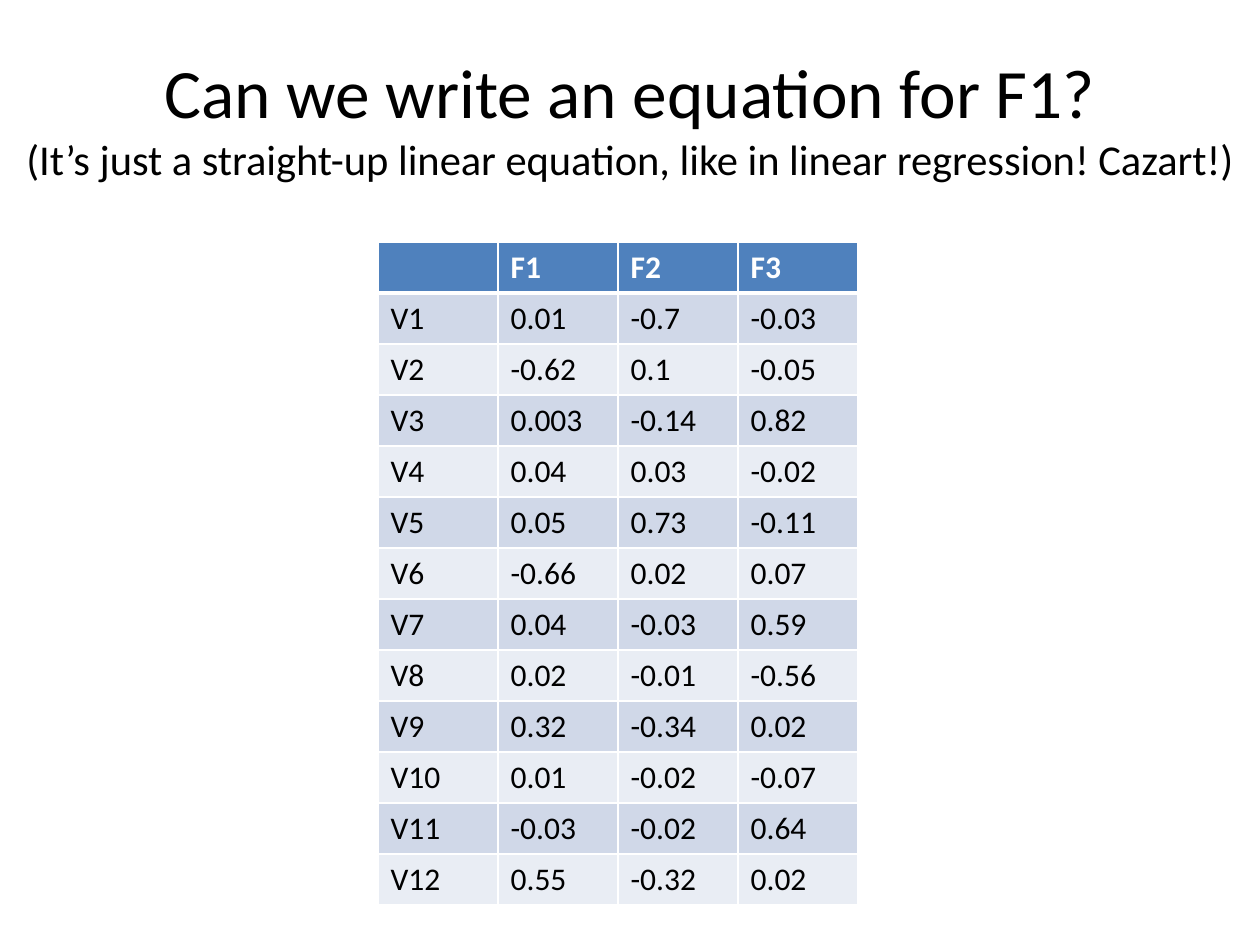
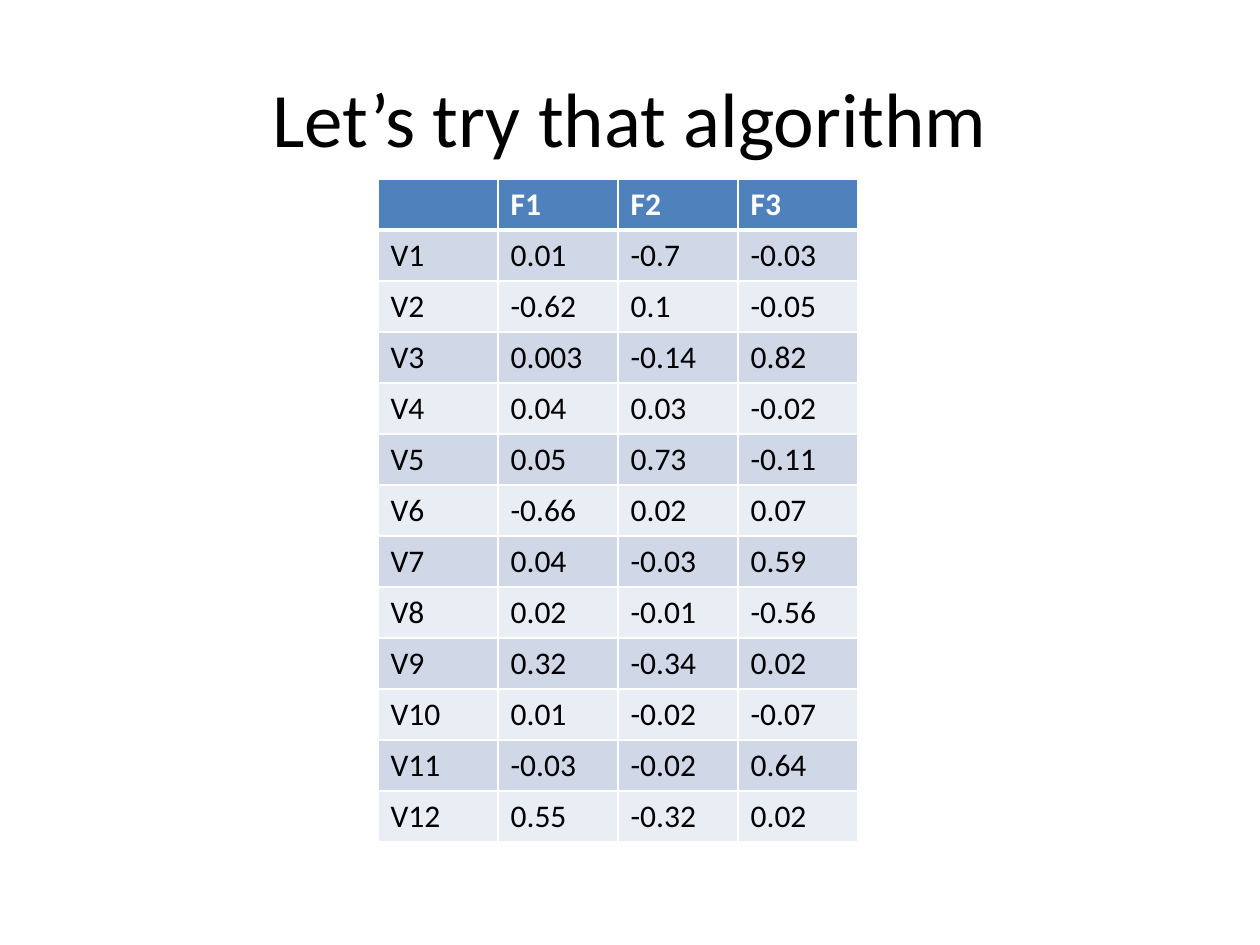
from lxml import etree
from pptx import Presentation
from pptx.dml.color import RGBColor
from pptx.enum.text import MSO_ANCHOR, PP_ALIGN
from pptx.oxml.ns import qn
from pptx.util import Emu, Pt

MIDDLE = MSO_ANCHOR.MIDDLE
CENTER = PP_ALIGN.CENTER

PX = 914400 // 126
FONT = "Calibri"
COLORS = {
    "text": "000000",
    "header": "4F81BD",
    "header_text": "FFFFFF",
    "band_dark": "D0D8E8",
    "band_light": "E9EDF4",
    "border": "FFFFFF",
}
TITLE_TOP, TITLE_HEIGHT = 38, 157
TABLE_LEFT, COLUMN_WIDTH, ROW_HEIGHT = 378, 120, 51
THIN, THICK = 1, 3

FACTORS = ["", "F1", "F2", "F3"]
LOADINGS = [
    ("0.01", "-0.7", "-0.03"),
    ("-0.62", "0.1", "-0.05"),
    ("0.003", "-0.14", "0.82"),
    ("0.04", "0.03", "-0.02"),
    ("0.05", "0.73", "-0.11"),
    ("-0.66", "0.02", "0.07"),
    ("0.04", "-0.03", "0.59"),
    ("0.02", "-0.01", "-0.56"),
    ("0.32", "-0.34", "0.02"),
    ("0.01", "-0.02", "-0.07"),
    ("-0.03", "-0.02", "0.64"),
    ("0.55", "-0.32", "0.02"),
]


def px(length):
    return Emu(length * PX)


def color(name):
    return RGBColor.from_string(COLORS[name])


def add_run(paragraph, text, size, color_name="text", bold=False):
    run = paragraph.add_run()
    run.text = text
    run.font.name = FONT
    run.font.size = Pt(size)
    run.font.bold = bold
    run.font.color.rgb = color(color_name)


def add_title(slide, left, width, lines):
    """Centre (text, size) lines in the title band."""
    box = slide.shapes.add_textbox(px(left), px(TITLE_TOP), px(width), px(TITLE_HEIGHT))
    frame = box.text_frame
    frame.word_wrap = True
    frame.vertical_anchor = MIDDLE
    paragraph = frame.paragraphs[0]
    paragraph.alignment = CENTER
    for index, (text, size) in enumerate(lines):
        if index:
            paragraph.add_line_break()
        add_run(paragraph, text, size)


def add_borders(cell, top, bottom):
    properties = cell._tc.get_or_add_tcPr()
    for side, width in (("L", THIN), ("R", THIN), ("T", top), ("B", bottom)):
        line = etree.SubElement(properties, qn(f"a:ln{side}"), w=str(Pt(width)))
        fill = etree.SubElement(line, qn("a:solidFill"))
        etree.SubElement(fill, qn("a:srgbClr"), val=COLORS["border"])


def style_cell(cell, text, row):
    is_header = row == 0
    add_borders(cell, THICK if row == 1 else THIN, THICK if is_header else THIN)
    fill_name = "header" if is_header else ("band_light", "band_dark")[row % 2]
    cell.fill.solid()
    cell.fill.fore_color.rgb = color(fill_name)
    if text:
        text_color = "header_text" if is_header else "text"
        add_run(cell.text_frame.paragraphs[0], text, 18, text_color, is_header)


def add_loadings_table(slide, left, top):
    rows = [FACTORS] + [(f"V{number}", *values) for number, values in enumerate(LOADINGS, 1)]
    table = slide.shapes.add_table(
        len(rows), len(FACTORS), px(left), px(top),
        px(COLUMN_WIDTH * len(FACTORS)), px(ROW_HEIGHT * len(rows)),
    ).table
    for row, values in enumerate(rows):
        for column, text in enumerate(values):
            style_cell(table.cell(row, column), text, row)


def add_loadings_slide(presentation, title_left, title_width, title_lines, table_top):
    slide = presentation.slides.add_slide(presentation.slide_layouts[6])
    add_title(slide, title_left, title_width, title_lines)
    add_loadings_table(slide, TABLE_LEFT, table_top)


def main():
    presentation = Presentation()
    presentation.slide_width = px(1260)
    presentation.slide_height = px(945)
    add_loadings_slide(presentation, 0, 1260, [
        ("Can we write an equation for F1?", 39.6),
        ("(It’s just a straight-up linear equation, like in linear regression! Cazart!)", 24.3),
    ], 242)
    add_loadings_slide(presentation, 63, 1134, [("Let’s try that algorithm", 44)], 179)
    presentation.save("out.pptx")


if __name__ == "__main__":
    main()
